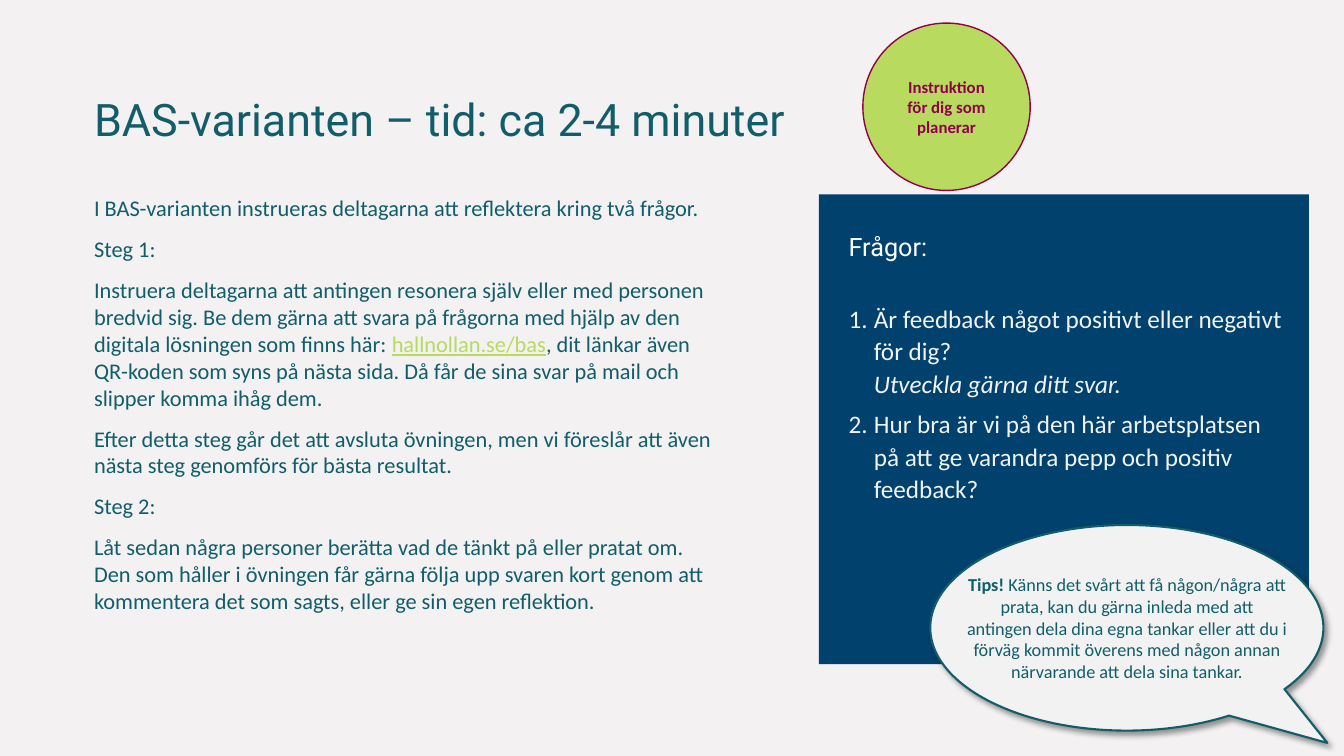
from lxml import etree
from pptx import Presentation
from pptx.dml.color import RGBColor
from pptx.enum.shapes import MSO_SHAPE
from pptx.enum.text import MSO_ANCHOR, MSO_AUTO_SIZE, PP_ALIGN
from pptx.oxml import parse_xml
from pptx.oxml.ns import nsdecls, qn
from pptx.util import Inches, Pt

RECT, OVAL = MSO_SHAPE.RECTANGLE, MSO_SHAPE.OVAL
BUBBLE = MSO_SHAPE.OVAL_CALLOUT
TOP, MIDDLE = MSO_ANCHOR.TOP, MSO_ANCHOR.MIDDLE
LEFT, CENTER = PP_ALIGN.LEFT, PP_ALIGN.CENTER
FIXED = MSO_AUTO_SIZE.NONE
COLORS = {
    "ground": "F3F1F1", "teal": "115E6A", "navy": "00416D", "lime": "B8DA5E",
    "plum": "92004D", "pale": "F2F2F2", "white": "FFFFFF",
}
COLORS = {name: RGBColor.from_string(code) for name, code in COLORS.items()}

deck = Presentation()
deck.slide_width, deck.slide_height = Inches(13.33), Inches(7.5)
COL, ROW = deck.slide_width / 64, deck.slide_height / 36


def grid(x, y, w, h):
    """Turn columns and rows into left, top, width and height."""
    return int(x * COL), int(y * ROW), int(w * COL), int(h * ROW)


def write(para, text, size, color, font="Calibri", align=LEFT, bullet=None, indent=0):
    """Fill a paragraph; text is a string or a list of strings for runs."""
    props = para._p.get_or_add_pPr()
    props.set("marL", str(Inches(indent)))
    props.set("indent", str(-Inches(indent)))
    mark = etree.SubElement(props, qn("a:buAutoNum" if bullet else "a:buNone"))
    if bullet:
        mark.set("type", bullet)
    para.alignment = align
    para.line_spacing = 1.0
    para.space_before = para.space_after = Pt(0)
    para.font.size, para.font.name = Pt(size), font
    para.font.color.rgb = COLORS[color]
    for part in [text] if isinstance(text, str) else text:
        if part == "\n":
            para.add_line_break()
        else:
            para.add_run().text = part


slide = deck.slides.add_slide(deck.slide_layouts[1])
slide.background.fill.solid()
slide.background.fill.fore_color.rgb = COLORS["ground"]

# Title and body
title, body = slide.shapes.title, slide.placeholders[1]
title.left, title.top, title.width, title.height = grid(4, 4.13, 52.27, 4.7)
body.left, body.top, body.width, body.height = grid(4, 8.11, 30.67, 22.85)
for holder in (title, body):
    holder.text_frame.word_wrap = True
    holder.text_frame.auto_size = FIXED
    holder.text_frame.vertical_anchor = TOP
body.text_frame.margin_top = Inches(0.24)
write(title.text_frame.paragraphs[0], "BAS-varianten – tid: ca 2-4 minuter",
      32, "teal", "Roboto")

STEPS = [
    "I BAS-varianten instrueras deltagarna att reflektera kring två frågor.",
    "Steg 1:",
    ["Instruera deltagarna att antingen resonera själv eller med personen bredvid "
     "sig. Be dem gärna att svara på frågorna med hjälp av den digitala lösningen "
     "som finns här: ",
     "hallnollan.se/bas",
     ", dit länkar även QR-koden som syns på nästa sida. Då får de sina svar på "
     "mail och slipper komma ihåg dem."],
    "Efter detta steg går det att avsluta övningen, men vi föreslår att även "
    "nästa steg genomförs för bästa resultat.",
    "Steg 2:",
    "Låt sedan några personer berätta vad de tänkt på eller pratat om. Den som "
    "håller i övningen får gärna följa upp svaren kort genom att kommentera det "
    "som sagts, eller ge sin egen reflektion.",
]
frame = body.text_frame
for i, step in enumerate(STEPS):
    para = frame.add_paragraph() if i else frame.paragraphs[0]
    write(para, step, 16, "teal")
    if i:
        para.space_before = Pt(10)
address = frame.paragraphs[2].runs[1].font
address.underline = True
address.color.rgb = COLORS["lime"]

# Panel, speech bubble and badge
panel = slide.shapes.add_shape(RECT, *grid(39, 9.26, 23.33, 22.37))
group = slide.shapes.add_group_shape()
bubble = group.shapes.add_shape(BUBBLE, *grid(44.3, 25, 18.72, 9.79))
bubble.adjustments[0], bubble.adjustments[1] = 0.51, 0.56
tips = group.shapes.add_textbox(*grid(45.56, 25, 16.2, 9.79))
ask = slide.shapes.add_textbox(*grid(39.94, 10.7, 21.98, 13.54))
badge = slide.shapes.add_shape(OVAL, *grid(41.09, 1.1, 7.97, 7.97))

for shape, fill, line, width in [(panel, "navy", None, 0),
                                 (bubble, "pale", "teal", 1.5),
                                 (badge, "lime", "plum", 1)]:
    shape.shadow.inherit = False
    shape.fill.solid()
    shape.fill.fore_color.rgb = COLORS[fill]
    if line:
        shape.line.color.rgb = COLORS[line]
        shape.line.width = Pt(width)
    else:
        shape.line.fill.background()
for box, anchor in [(tips, MIDDLE), (ask, TOP), (badge, MIDDLE)]:
    box.text_frame.word_wrap = True
    box.text_frame.vertical_anchor = anchor

effects = bubble._element.spPr.find(qn("a:effectLst"))
effects.append(parse_xml(
    f'<a:outerShdw {nsdecls("a")} blurRad="{Pt(4)}" dist="{Pt(3)}" dir="2700000" '
    'algn="tl" rotWithShape="0"><a:srgbClr val="000000"><a:alpha val="40000"/>'
    '</a:srgbClr></a:outerShdw>'))

para = tips.text_frame.paragraphs[0]
write(para, ["Tips! ",
             "Känns det svårt att få någon/några att prata, kan du gärna inleda med "
             "att antingen dela dina egna tankar eller att du i förväg kommit överens "
             "med någon annan närvarande att dela sina tankar."],
      13, "teal", align=CENTER)
para.runs[0].font.bold = True

# Questions
frame = ask.text_frame
head = frame.paragraphs[0]
write(head, "Frågor:", 18, "white", "Roboto")
QUERIES = [
    ["Är feedback något positivt eller negativt för dig? ", "\n",
     "Utveckla gärna ditt svar."],
    "Hur bra är vi på den här arbetsplatsen på att ge varandra pepp och positiv "
    "feedback?",
]
for query in QUERIES:
    write(frame.add_paragraph(), query, 18, "pale",
          bullet="arabicPeriod", indent=0.25)
for para in frame.paragraphs:
    para.line_spacing = 1.07
    para.space_after = Pt(6)
head.space_after = Pt(28)
frame.paragraphs[1].runs[1].font.italic = True

para = badge.text_frame.paragraphs[0]
write(para, "Instruktion för dig som planerar", 12, "plum", align=CENTER)
para.font.bold = True

deck.save("out.pptx")
